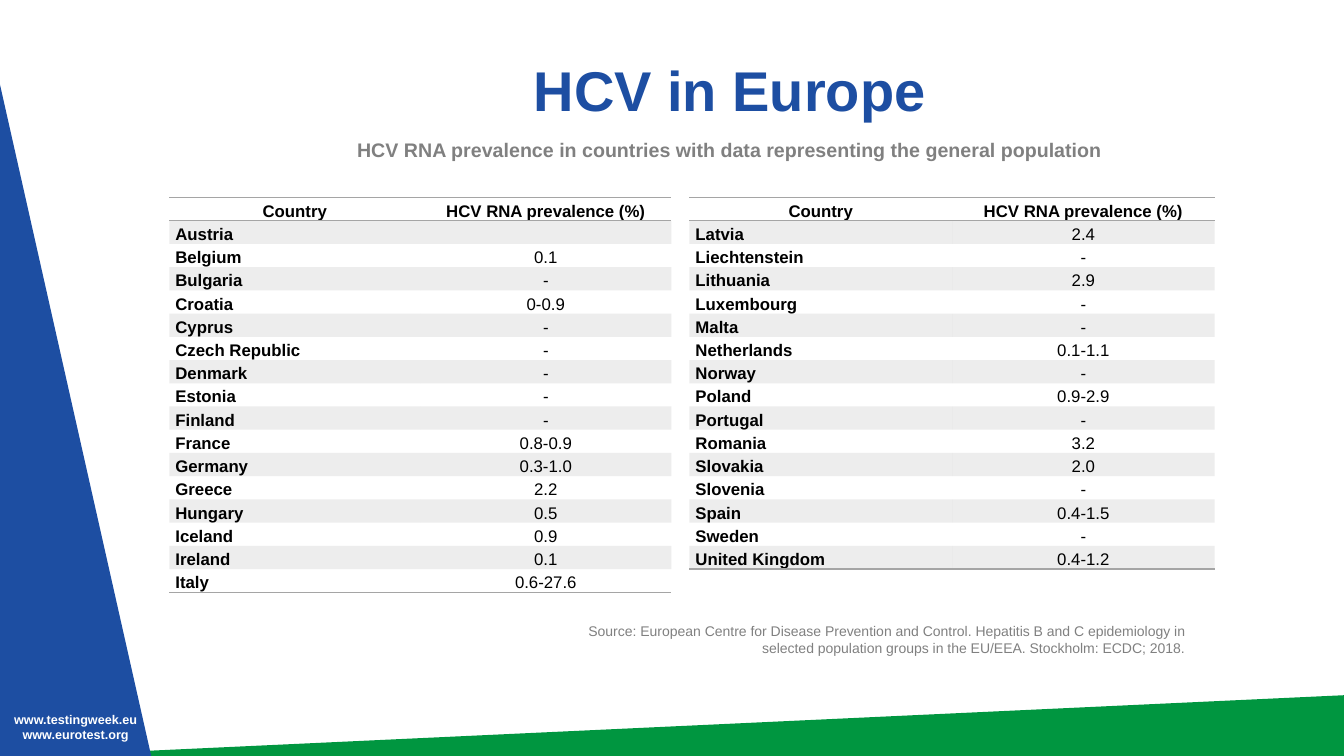
from lxml.etree import SubElement as Sub
from pptx import Presentation
from pptx.dml.color import RGBColor
from pptx.enum.shapes import MSO_SHAPE as Kind
from pptx.enum.text import MSO_ANCHOR as Anchor, PP_ALIGN as Align
from pptx.oxml.ns import qn
from pptx.util import Inches, Pt

BLUE = RGBColor(0x1D, 0x4E, 0xA2)
GREEN = RGBColor(0x00, 0x96, 0x40)
GRAY = RGBColor(0x80, 0x80, 0x80)
SILVER = RGBColor(0xA5, 0xA5, 0xA5)
BLACK = RGBColor(0, 0, 0)
WHITE = RGBColor(0xFF, 0xFF, 0xFF)
PLAIN = "{2D5ABB26-0587-4C30-8999-92F81FD0307C}"

deck = Presentation()
deck.slide_width, deck.slide_height = Inches(13.33), Inches(7.5)
slide = deck.slides.add_slide(deck.slide_layouts[6])
shapes = slide.shapes

# Grid of 80 columns by 45 rows
COL, ROW = deck.slide_width / 80, deck.slide_height / 45


def place(x, y, w, h):
    return int(x * COL), int(y * ROW), int(w * COL), int(h * ROW)


def write(para, text, size, color, bold, align):
    para.alignment = align
    run = para.add_run()
    run.text = text
    font = run.font
    font.name, font.size, font.bold = "Arial", Pt(size), bold
    font.color.rgb = color


# Corner wedges
for spot, turn, color in [
    ((38.14, 3.24, 3.72, 80), 270, GREEN),
    ((0, 5.04, 9, 39.96), 0, BLUE),
]:
    wedge = shapes.add_shape(Kind.RIGHT_TRIANGLE, *place(*spot))
    wedge.rotation = turn
    wedge.shadow.inherit = False
    wedge.fill.solid()
    wedge.fill.fore_color.rgb = color
    wedge.line.fill.background()

# Web addresses, title, subtitle and source
web = ["www.testingweek.eu", "www.eurotest.org"]
title = ["HCV in Europe"]
sub = ["HCV RNA prevalence in countries with data representing the general population"]
source = ["Source: European Centre for Disease Prevention and Control. "
          "Hepatitis B and C epidemiology in selected population groups "
          "in the EU/EEA. Stockholm: ECDC; 2018."]
for spot, lines, size, color, bold, align, anchor, pitch in [
    ((-0.48, 42.06, 9.96, 2.4), web, 9, WHITE, True, Align.CENTER, Anchor.TOP, 1),
    ((12.36, 2.4, 62.16, 6.36), title, 40, BLUE, True, Align.CENTER, Anchor.MIDDLE, 0.9),
    ((12.36, 7.92, 62.16, 2.4), sub, 14, GRAY, True, Align.CENTER, Anchor.TOP, 1),
    ((32.7, 36.78, 38.4, 2.64), source, 10, GRAY, False, Align.RIGHT, Anchor.TOP, 1),
]:
    frame = shapes.add_textbox(*place(*spot)).text_frame
    frame.word_wrap = True
    frame.vertical_anchor = anchor
    for i, line in enumerate(lines):
        para = frame.add_paragraph() if i else frame.paragraphs[0]
        para.line_spacing = pitch
        write(para, line, size, color, bold, align)

# Prevalence by country
head = ("Country", "HCV RNA prevalence (%)")
west = [
    head, ("Austria", ""), ("Belgium", "0.1"), ("Bulgaria", "-"),
    ("Croatia", "0-0.9"), ("Cyprus", "-"), ("Czech Republic", "-"),
    ("Denmark", "-"), ("Estonia", "-"), ("Finland", "-"),
    ("France", "0.8-0.9"), ("Germany", "0.3-1.0"), ("Greece", "2.2"),
    ("Hungary", "0.5"), ("Iceland", "0.9"), ("Ireland", "0.1"),
    ("Italy", "0.6-27.6"),
]
east = [
    head, ("Latvia", "2.4"), ("Liechtenstein", "-"), ("Lithuania", "2.9"),
    ("Luxembourg", "-"), ("Malta", "-"), ("Netherlands", "0.1-1.1"),
    ("Norway", "-"), ("Poland", "0.9-2.9"), ("Portugal", "-"),
    ("Romania", "3.2"), ("Slovakia", "2.0"), ("Slovenia", "-"),
    ("Spain", "0.4-1.5"), ("Sweden", "-"), ("United Kingdom", "0.4-1.2"),
]
for data, left, wide, high in [(west, 10.08, 14.94, 1.26), (east, 41.04, 15.63, 1.34)]:
    count = len(data)
    spot = place(left, 11.76, 2 * wide, count * high)
    grid = shapes.add_table(count, 2, *spot).table
    grid.first_row = grid.horz_banding = False
    grid._tbl.tblPr.find(qn("a:tableStyleId")).text = PLAIN
    for col in grid.columns:
        col.width = int(wide * COL)
    for r, pair in enumerate(data):
        grid.rows[r].height = int(high * ROW)
        # Rules frame the header and close the table
        edges = ["a:lnT", "a:lnB"] if r == 0 else ["a:lnB"] if r == count - 1 else []
        for c, text in enumerate(pair):
            cell = grid.cell(r, c)
            cell.margin_left = cell.margin_right = Inches(0.06)
            cell.margin_top = cell.margin_bottom = 0
            cell.vertical_anchor = Anchor.BOTTOM
            props = cell._tc.get_or_add_tcPr()
            for edge in edges:
                rule = Sub(props, qn(edge), w=str(Pt(1)))
                paint = Sub(rule, qn("a:solidFill"))
                Sub(paint, qn("a:srgbClr"), val=str(SILVER))
            # Odd rows carry a light tint
            if r % 2:
                cell.fill.solid()
                cell.fill.fore_color.rgb = SILVER
                tint = props.find(qn("a:solidFill")).find(qn("a:srgbClr"))
                Sub(tint, qn("a:alpha"), val="20000")
            else:
                cell.fill.background()
            para = cell.text_frame.paragraphs[0]
            para.line_spacing = 1.15
            para.space_after = Pt(2)
            if text:
                align = Align.CENTER if r == 0 or c else Align.LEFT
                write(para, text, 12, BLACK, r == 0 or c == 0, align)
            else:
                Sub(para._p, qn("a:endParaRPr"), sz="1200")

deck.save("out.pptx")
